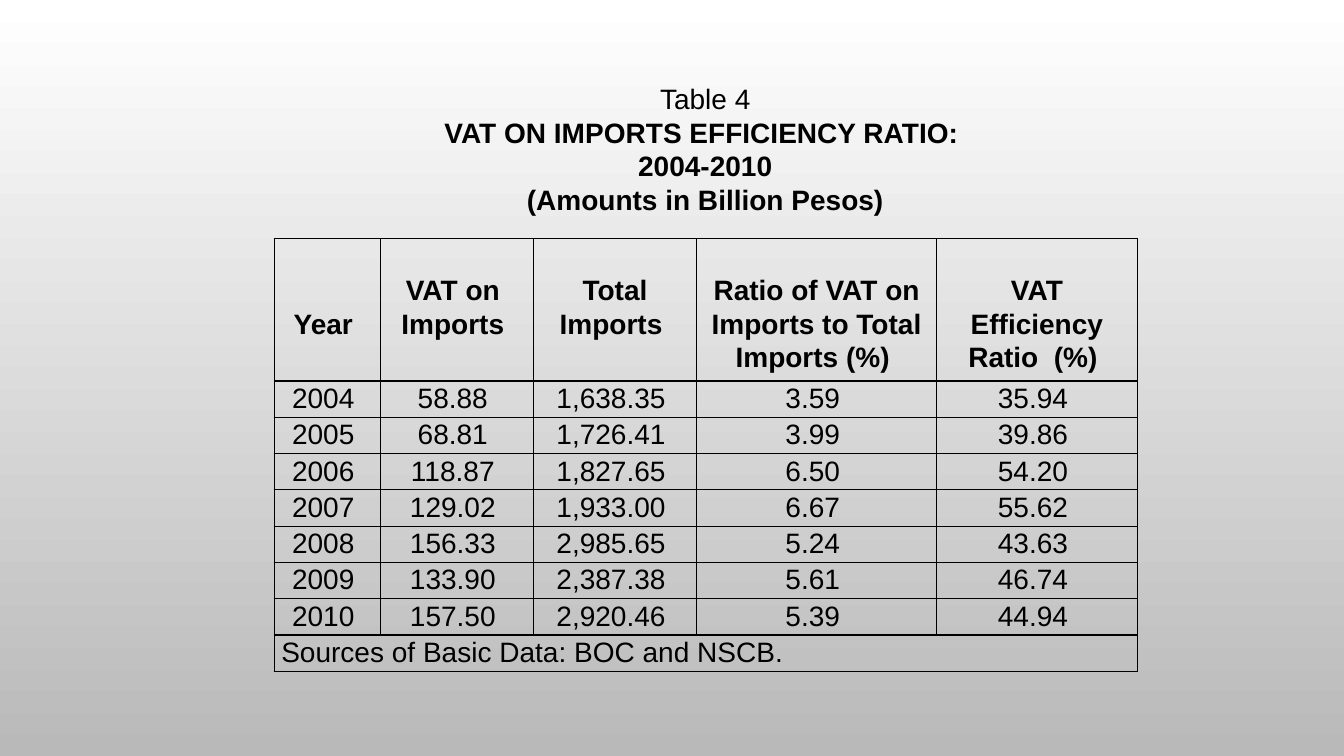
from lxml.etree import SubElement
from pptx import Presentation
from pptx.dml.color import RGBColor
from pptx.enum.text import MSO_ANCHOR, MSO_AUTO_SIZE, PP_ALIGN
from pptx.oxml.ns import qn
from pptx.util import Inches, Pt

BLACK = "000000"


def write(tf, text, bold=False, align=PP_ALIGN.CENTER, spacing=None, insets=(0.1, 0.05, 0.1, 0.05)):
    """Fill a text frame, one paragraph per line; insets are left, top, right, bottom."""
    tf.word_wrap = True
    tf.margin_left, tf.margin_top, tf.margin_right, tf.margin_bottom = map(Inches, insets)
    tf.text = text
    for p in tf.paragraphs:
        p.alignment = align
        p.line_spacing = spacing
        for r in p.runs:
            r.font.name = "Arial"
            r.font.size = Pt(20)
            r.font.bold = bold
            r.font.color.rgb = RGBColor.from_string(BLACK)


def draw_borders(cell):
    tc_pr = cell._tc.get_or_add_tcPr()
    for i, side in enumerate(("lnL", "lnR", "lnT", "lnB")):
        ln = SubElement(tc_pr, qn(f"a:{side}"), w=str(Pt(1)))
        fill = SubElement(ln, qn("a:solidFill"))
        SubElement(fill, qn("a:srgbClr"), val=BLACK)
        tc_pr.insert(i, ln)


prs = Presentation()
prs.slide_width, prs.slide_height = Inches(13.33), Inches(7.5)
s = prs.slides.add_slide(prs.slide_layouts[5])

bg = s.background.fill
bg.gradient()
bg.gradient_angle = 270
for stop, color in zip(bg.gradient_stops, ("FFFFFF", "B9B9B9")):
    stop.color.rgb = RGBColor.from_string(color)

# Title
title = s.shapes.title
title.left, title.top, title.width, title.height = map(Inches, (3.66, 0.6, 6.67, 1.62))
tf = title.text_frame
write(tf, "Table 4\nVAT ON IMPORTS EFFICIENCY RATIO: \n2004-2010\n(Amounts in Billion Pesos)",
      bold=True, insets=(0.1, 0.21, 0.1, 0.05))
tf.paragraphs[0].runs[0].font.bold = False
tf.vertical_anchor = MSO_ANCHOR.TOP
tf.auto_size = MSO_AUTO_SIZE.SHAPE_TO_FIT_TEXT

# Table
headers = ["Year", "VAT on \nImports", "Total Imports",
           "Ratio of VAT on Imports to Total Imports (%)", "VAT Efficiency Ratio  (%)"]
data = [
    ("2004", "58.88", "1,638.35", "3.59", "35.94"),
    ("2005", "68.81", "1,726.41", "3.99", "39.86"),
    ("2006", "118.87", "1,827.65", "6.50", "54.20"),
    ("2007", "129.02", "1,933.00", "6.67", "55.62"),
    ("2008", "156.33", "2,985.65", "5.24", "43.63"),
    ("2009", "133.90", "2,387.38", "5.61", "46.74"),
    ("2010", "157.50", "2,920.46", "5.39", "44.94"),
]
source = ("Sources of Basic Data: BOC and NSCB.", "", "", "", "")
rows = [headers, *data, source]
col_widths = [1.05, 1.52, 1.62, 2.38, 1.99]
header_height, row_height, line_height = 1.4, 0.36, 0.34

table = s.shapes.add_table(len(rows), len(headers), Inches(2.72), Inches(2.37),
                           Inches(8.56), Inches(4.28)).table
table.first_row = table.horz_banding = False
for col, width in zip(table.columns, col_widths):
    col.width = Inches(width)
for i, row in enumerate(rows):
    is_header, is_source = row is headers, row is source
    table.rows[i].height = Inches(header_height if is_header else row_height)
    for j, text in enumerate(row):
        cell = table.cell(i, j)
        cell.fill.background()
        draw_borders(cell)
        top = line_height * (2 if j == 0 else 1) if is_header else 0
        write(cell.text_frame, f"{text} " if text else "", bold=is_header,
              align=PP_ALIGN.JUSTIFY if is_source else PP_ALIGN.CENTER, spacing=1.07)
        cell.margin_left = cell.margin_right = Inches(0.07)
        cell.margin_top, cell.margin_bottom = Inches(top), 0
last = len(rows) - 1
table.cell(last, 0).merge(table.cell(last, len(headers) - 1))

prs.save("out.pptx")
